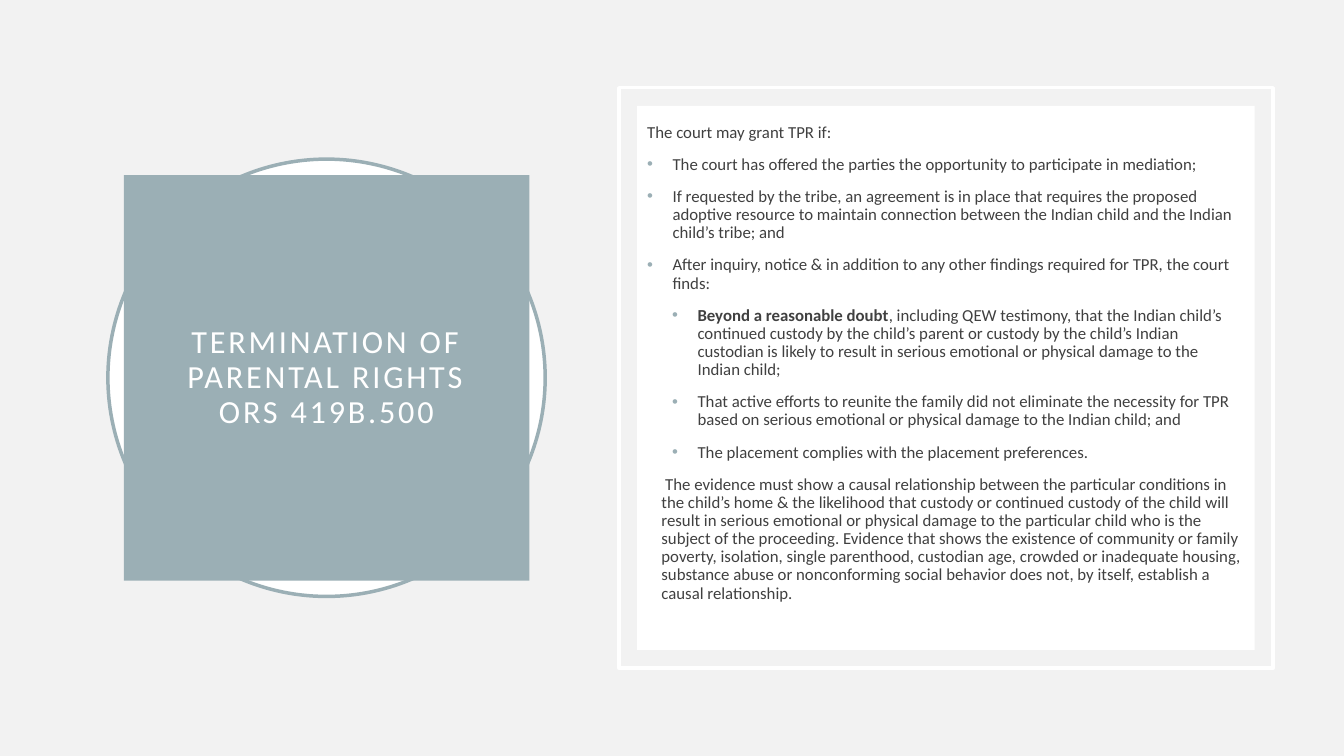
from copy import deepcopy

from lxml.etree import SubElement
from pptx import Presentation
from pptx.dml.color import RGBColor
from pptx.enum.shapes import MSO_SHAPE
from pptx.enum.text import MSO_ANCHOR, MSO_AUTO_SIZE, PP_ALIGN
from pptx.oxml.ns import qn
from pptx.util import Cm, Pt

TITLE = "TERMINATION OF PARENTAL RIGHTS\vORS 419B.500"
# Each paragraph: style, then (text, bold) spans
BODY = [
    ("plain", [("The court may grant TPR if:", False)]),
    ("bullet", [("The court has offered the parties the opportunity to participate in "
                 "mediation;", False)]),
    ("bullet", [("If requested by the tribe, an agreement is in place that requires the "
                 "proposed adoptive resource to maintain connection between the Indian child "
                 "and the Indian child’s tribe; and", False)]),
    ("bullet", [("After inquiry, notice & in addition to any other findings required for "
                 "TPR, the court finds:", False)]),
    ("sub-bullet", [("Beyond a reasonable doubt", True),
                    (", including QEW testimony, that the Indian child’s continued custody "
                     "by the child’s parent or custody by the child’s Indian custodian is "
                     "likely to result in serious emotional or physical damage to the Indian "
                     "child;", False)]),
    ("sub-bullet", [("That active efforts to reunite the family did not eliminate the "
                     "necessity for TPR based on serious emotional or physical damage to the "
                     "Indian child; and", False)]),
    ("sub-bullet", [("The placement complies with the placement preferences.", False)]),
    ("closing", [(" The evidence must show a causal relationship between the particular "
                  "conditions in the child’s home & the likelihood that custody or continued "
                  "custody of the child will result in serious emotional or physical damage "
                  "to the particular child who is the subject of the proceeding. Evidence "
                  "that shows the existence of community or family poverty, isolation, "
                  "single parenthood, custodian age, crowded or inadequate housing, "
                  "substance abuse or nonconforming social behavior does not, by itself, "
                  "establish a causal relationship.", False)]),
]
# Style: level, left margin and first-line indent in cm, bullet
STYLES = {
    "plain": (0, 0, 0, ""),
    "bullet": (0, 0.64, -0.64, "•"),
    "sub-bullet": (1, 1.27, -0.64, "•"),
    "closing": (1, 0.36, 0, ""),
}
BACKGROUND, ACCENT, WHITE, INK = "F2F2F2", "9BAFB5", "FFFFFF", "404040"
RING = (2.72, 4.01, 11.02, 11.02)
RING_GAP = 0.4
FRAME = (15.6, 2.21, 16.48, 14.63)
FRAME_GAP = 0.46


def color(value):
    return RGBColor.from_string(value)


def inset(area, across, down):
    left, top, width, height = area
    return left + across, top + down, width - 2 * across, height - 2 * down


def set_all(target, values):
    for name, value in values.items():
        setattr(target, name, value)


def place(box, area):
    names = ("left", "top", "width", "height")
    set_all(box, dict(zip(names, map(Cm, area))))


def paint(box, fill="", line=""):
    if fill:
        box.fill.solid()
        box.fill.fore_color.rgb = color(fill)
    else:
        box.fill.background()
    if line:
        box.line.color.rgb = color(line)
        box.line.width = Pt(2.5)
    else:
        box.line.fill.background()


def add_panel(page, kind, area, fill="", line=""):
    panel = page.shapes.add_shape(kind, *map(Cm, area))
    panel.shadow.inherit = False
    paint(panel, fill, line)
    return panel


def format_span(span, size, ink, bold=False):
    set_all(span.font, {"name": "Calibri", "size": Pt(size), "bold": bold})
    span.font.color.rgb = color(ink)


def add_title(page):
    title = page.shapes.title
    place(title, inset(RING, RING_GAP, RING_GAP))
    paint(title, ACCENT)
    frame = title.text_frame
    set_all(frame, {"auto_size": MSO_AUTO_SIZE.NONE, "word_wrap": True,
                    "vertical_anchor": MSO_ANCHOR.MIDDLE,
                    "margin_left": Cm(0.5), "margin_right": Cm(0.5),
                    "margin_top": Cm(0.5), "margin_bottom": Cm(0.5)})
    frame.text = TITLE
    para = frame.paragraphs[0]
    set_all(para, {"alignment": PP_ALIGN.CENTER, "line_spacing": 0.9})
    for span in para.runs:
        format_span(span, 23, WHITE)
        span.font._element.set("spc", "200")
    for line_break in para._p.findall(qn("a:br")):
        line_break.append(deepcopy(para.runs[0].font._element))
    return title


def add_bullet(para, mark):
    properties = para._p.get_or_add_pPr()
    tint = SubElement(properties, qn("a:buClr"))
    SubElement(tint, qn("a:srgbClr"), val=ACCENT)
    SubElement(properties, qn("a:buFont"), typeface="Arial")
    SubElement(properties, qn("a:buChar"), char=mark)


def add_body(page):
    box = page.shapes.add_textbox(*map(Cm, inset(FRAME, FRAME_GAP, 0)))
    frame = box.text_frame
    set_all(frame, {"word_wrap": True, "vertical_anchor": MSO_ANCHOR.MIDDLE,
                    "margin_bottom": Cm(0.87)})
    for index, (style, spans) in enumerate(BODY):
        para = frame.add_paragraph() if index else frame.paragraphs[0]
        level, margin, indent, mark = STYLES[style]
        set_all(para, {"level": level, "line_spacing": 0.9, "space_before": Pt(10)})
        properties = para._p.get_or_add_pPr()
        properties.set("marL", str(Cm(margin)))
        properties.set("indent", str(Cm(indent)))
        if mark:
            add_bullet(para, mark)
        for text, bold in spans:
            span = para.add_run()
            span.text = text
            format_span(span, 12, INK, bold)


def main():
    deck = Presentation()
    set_all(deck, {"slide_width": Cm(33.87), "slide_height": Cm(19.05)})
    page = deck.slides.add_slide(deck.slide_layouts.get_by_name("Title Only"))
    page.background.fill.solid()
    page.background.fill.fore_color.rgb = color(BACKGROUND)
    title = add_title(page)
    ring = add_panel(page, MSO_SHAPE.OVAL, RING, WHITE, ACCENT)
    title.element.addprevious(ring.element)  # the ring lies behind the title
    add_panel(page, MSO_SHAPE.RECTANGLE, FRAME, line=WHITE)
    add_panel(page, MSO_SHAPE.RECTANGLE, inset(FRAME, FRAME_GAP, FRAME_GAP), WHITE)
    add_body(page)
    deck.save("out.pptx")


if __name__ == "__main__":
    main()
